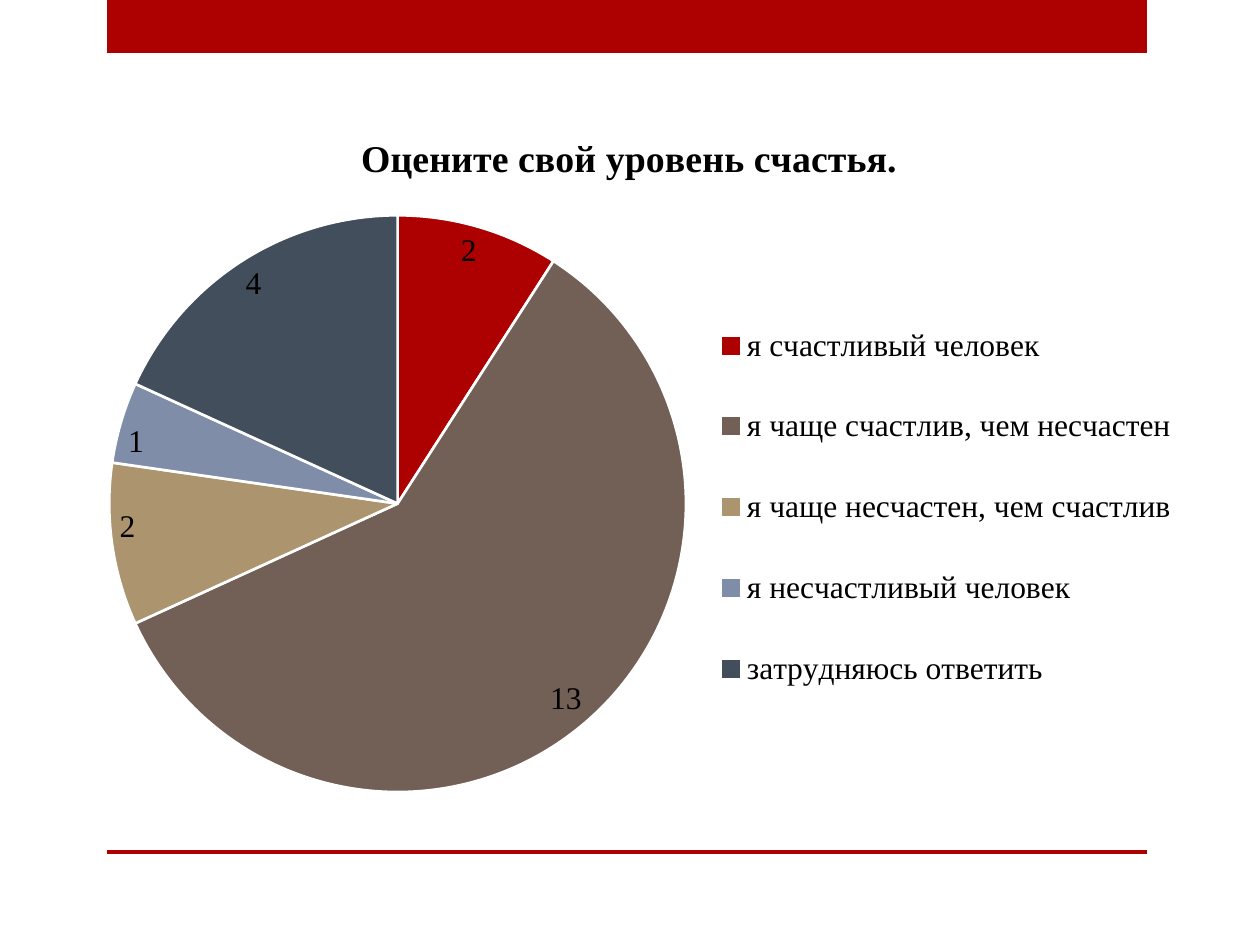
import pptx
import pptx.chart.data
import pptx.dml.color
import pptx.enum.chart
import pptx.enum.shapes
import pptx.oxml
import pptx.oxml.ns
import pptx.util

RGBColor = pptx.dml.color.RGBColor
RED = RGBColor(0xAD, 0x01, 0x01)
BROWN = RGBColor(0x72, 0x60, 0x56)
SAND = RGBColor(0xAC, 0x95, 0x6E)
BLUE = RGBColor(0x80, 0x8D, 0xA9)
SLATE = RGBColor(0x42, 0x4E, 0x5B)
BLACK = RGBColor(0, 0, 0)
WHITE = RGBColor(0xFF, 0xFF, 0xFF)

EMU_PER_PX = pptx.util.Inches(1) // 126

ANSWERS = [
    ("я счастливый человек", 2, RED),
    ("я чаще счастлив, чем несчастен", 13, BROWN),
    ("я чаще несчастен, чем счастлив", 2, SAND),
    ("я несчастливый человек", 1, BLUE),
    ("затрудняюсь ответить", 4, SLATE),
]


def px(*lengths):
    return [n * EMU_PER_PX for n in lengths]


def place(element, index, x, y, w, h, inner=False):
    """Give a chart part a manual layout, in fractions of the chart."""
    for old in element.findall(pptx.oxml.ns.qn("c:layout")):
        element.remove(old)
    target = '<c:layoutTarget val="inner"/>' if inner else ""
    modes = '<c:xMode val="edge"/><c:yMode val="edge"/>'
    sizes = "".join(f'<c:{k} val="{v}"/>' for k, v in zip("xywh", (x, y, w, h)))
    element.insert(index, pptx.oxml.parse_xml(
        f'<c:layout {pptx.oxml.ns.nsdecls("c")}><c:manualLayout>'
        f"{target}{modes}{sizes}</c:manualLayout></c:layout>"))


class Deck:
    font = "Times New Roman"
    text_size = pptx.util.Pt(18)
    title_size = pptx.util.Pt(21.6)

    def __init__(self, prs):
        self.s = prs.slides.add_slide(prs.slide_layouts[6])

    def style(self, font, size, bold=False):
        font.name, font.size, font.bold = self.font, size, bold
        font.color.rgb = BLACK

    def bar(self, x, y, w, h):
        sp = self.s.shapes.add_shape(
            pptx.enum.shapes.MSO_SHAPE.RECTANGLE, *px(x, y, w, h))
        sp.shadow.inherit = False
        sp.fill.solid()
        sp.fill.fore_color.rgb = RED
        sp.line.fill.background()

    def pie(self, x, y, w, h, title, answers):
        names, values, colors = zip(*answers)
        data = pptx.chart.data.CategoryChartData()
        data.categories = names
        data.add_series("Series 1", values)
        chart = self.s.shapes.add_chart(
            pptx.enum.chart.XL_CHART_TYPE.PIE, *px(x, y, w, h), data).chart
        self.style(chart.font, self.text_size)

        chart.has_title = True
        p = chart.chart_title.text_frame.paragraphs[0]
        p.text = title
        self.style(p.font, self.title_size, bold=True)

        chart.has_legend = True
        chart.legend.position = pptx.enum.chart.XL_LEGEND_POSITION.RIGHT
        chart.legend.include_in_layout = False
        self.style(chart.legend.font, self.text_size)

        plot = chart.plots[0]
        plot.vary_by_categories = True
        plot.has_data_labels = True
        labels = plot.data_labels
        labels.show_value = True
        labels.show_percentage = False
        labels.position = pptx.enum.chart.XL_LABEL_POSITION.INSIDE_END
        self.style(labels.font, self.text_size)
        for i, color in enumerate(colors):
            fmt = plot.series[0].points[i].format
            fmt.fill.solid()
            fmt.fill.fore_color.rgb = color
            fmt.line.color.rgb = WHITE
            fmt.line.width = pptx.util.Pt(1.5)

        root = chart.element.chart
        place(root.plotArea, 0, 0.04, 0.15, 0.51, 0.83, inner=True)
        place(root.find(pptx.oxml.ns.qn("c:legend")), 1, 0.57, 0.25, 0.42, 0.64)


def main():
    prs = pptx.Presentation()
    prs.slide_width, prs.slide_height = px(1260, 945)
    deck = Deck(prs)
    deck.bar(107, 0, 1040, 53)
    deck.bar(107, 850, 1040, 4)
    deck.pie(64, 106, 1131, 704, "Оцените свой уровень счастья.", ANSWERS)
    prs.save("out.pptx")


if __name__ == "__main__":
    main()
